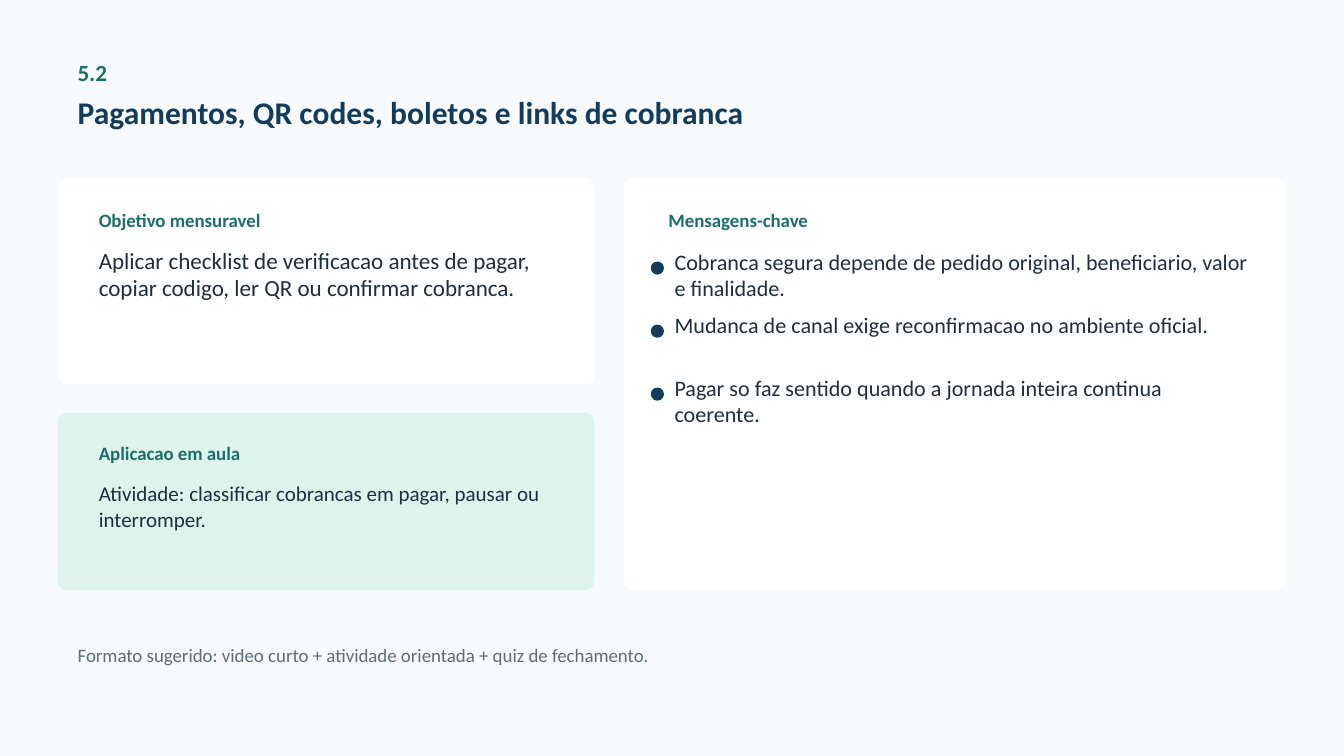
from pptx import Presentation
from pptx.dml.color import RGBColor
from pptx.enum.shapes import MSO_SHAPE as Shape
from pptx.util import Inches, Pt

PAPER = RGBColor(0xF7, 0xFA, 0xFC)
WHITE = RGBColor(0xFF, 0xFF, 0xFF)
MINT = RGBColor(0xDD, 0xF3, 0xEC)
TEAL = RGBColor(0x1D, 0x6E, 0x67)
NAVY = RGBColor(0x14, 0x3C, 0x5A)
INK = RGBColor(0x1F, 0x2F, 0x3D)
GRAY = RGBColor(0x5D, 0x6C, 0x78)

FONT = "Calibri"
RADIUS = 0.08
LEFT = 0.58
INNER = 0.79
TOP = 1.77
WIDE = 5.31
STEP = 0.625
POINTS = [
    "Cobranca segura depende de pedido original, beneficiario, valor e finalidade.",
    "Mudanca de canal exige reconfirmacao no ambiente oficial.",
    "Pagar so faz sentido quando a jornada inteira continua coerente.",
]


def add_text(slide, text, x, y, w, h, size, color, bold=False, pad=(0.19, 0.15)):
    box = slide.shapes.add_textbox(Inches(x), Inches(y), Inches(w), Inches(h))
    frame = box.text_frame
    frame.word_wrap = True
    frame.margin_left = frame.margin_right = Inches(pad[0])
    frame.margin_top = frame.margin_bottom = Inches(pad[1])
    frame.text = text
    font = frame.paragraphs[0].runs[0].font
    font.name = FONT
    font.size = Pt(size)
    font.bold = bold
    font.color.rgb = color


def add_solid(slide, kind, x, y, w, h, color):
    shape = slide.shapes.add_shape(kind, Inches(x), Inches(y), Inches(w), Inches(h))
    shape.shadow.inherit = False
    shape.fill.solid()
    shape.fill.fore_color.rgb = color
    shape.line.color.rgb = color
    shape.line.width = Pt(0)
    return shape


def add_card(slide, x, y, w, h, color):
    card = add_solid(slide, Shape.ROUNDED_RECTANGLE, x, y, w, h, color)
    card.adjustments[0] = RADIUS / min(w, h)


def add_label(slide, text, x, y):
    add_text(slide, text, x, y, 2.5, 0.35, 13.5, TEAL, True)


def add_point(slide, text, y):
    add_solid(slide, Shape.OVAL, 6.46, y + 0.14, 0.12, 0.12, NAVY)
    add_text(slide, text, 6.69, y, 5.71, 0.54, 15.8, INK, pad=(0, 0))


def main():
    deck = Presentation()
    deck.slide_width = Inches(13.33)
    deck.slide_height = Inches(7.5)
    slide = deck.slides.add_slide(deck.slide_layouts[6])
    slide.background.fill.solid()
    slide.background.fill.fore_color.rgb = PAPER

    add_text(slide, "5.2", LEFT, 0.44, 0.94, 0.42, 16.5, TEAL, True)
    add_text(slide, "Pagamentos, QR codes, boletos e links de cobranca",
             LEFT, 0.77, 8.23, 0.88, 22.5, NAVY, True)

    add_card(slide, LEFT, TOP, WIDE, 2.04, WHITE)
    add_label(slide, "Objetivo mensuravel", INNER, 1.96)
    add_text(slide, "Aplicar checklist de verificacao antes de pagar, "
             "copiar codigo, ler QR ou confirmar cobranca.",
             INNER, 2.29, 4.77, 1.25, 16.5, INK)

    add_card(slide, 6.19, TOP, 6.56, 4.08, WHITE)
    add_label(slide, "Mensagens-chave", 6.44, 1.96)
    for i, point in enumerate(POINTS):
        add_point(slide, point, 2.46 + i * STEP)

    add_card(slide, LEFT, 4.1, WIDE, 1.75, MINT)
    add_label(slide, "Aplicacao em aula", INNER, 4.27)
    add_text(slide, "Atividade: classificar cobrancas em pagar, pausar ou interromper.",
             INNER, 4.62, 4.77, 0.98, 15, INK)

    add_text(slide, "Formato sugerido: video curto + atividade orientada + quiz de fechamento.",
             LEFT, 6.27, 12.29, 0.44, 13.5, GRAY)
    deck.save("out.pptx")


if __name__ == "__main__":
    main()
